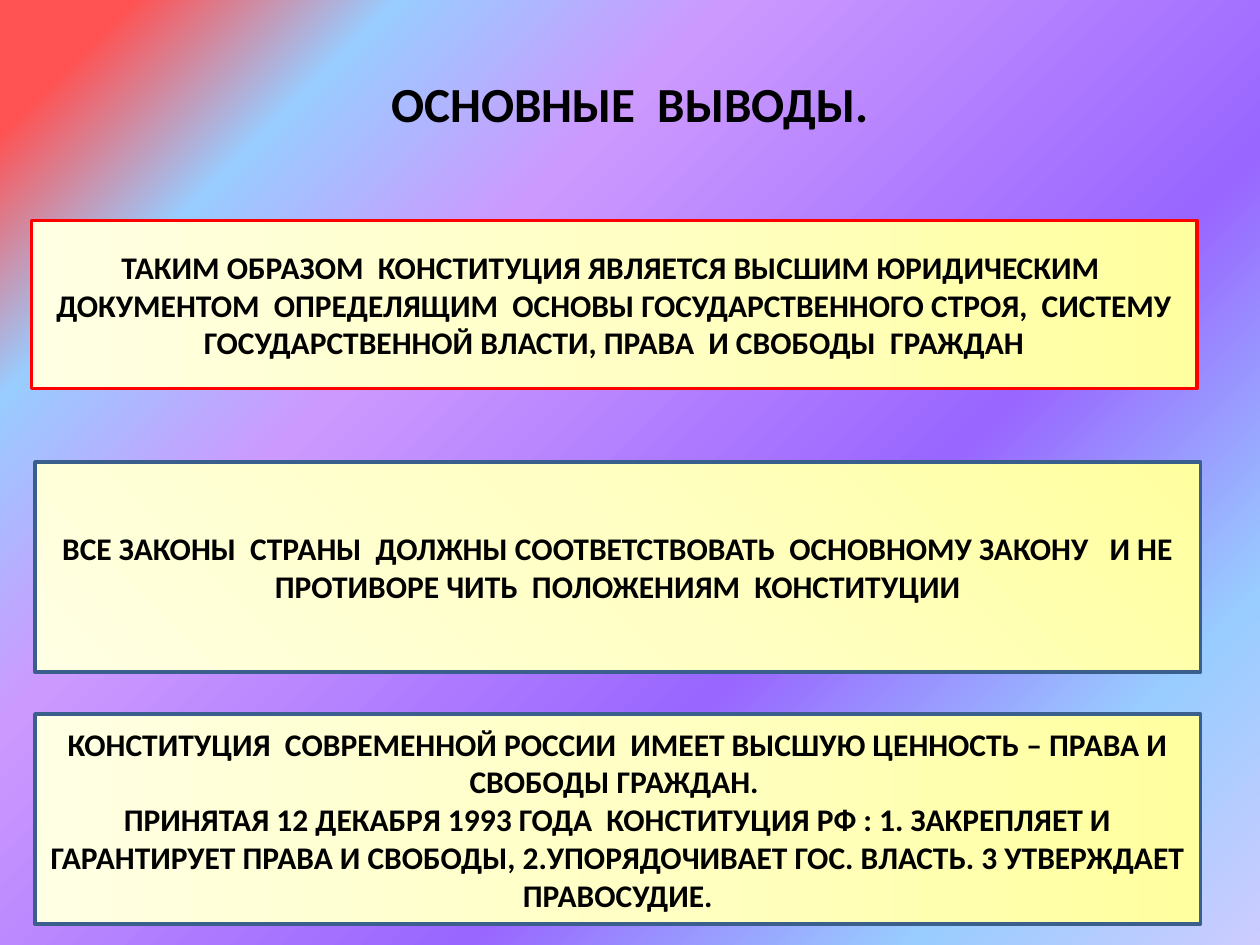
from lxml.etree import SubElement
from pptx import Presentation
from pptx.dml.color import RGBColor
from pptx.enum.shapes import MSO_SHAPE as Shape
from pptx.enum.text import MSO_ANCHOR as Anchor, PP_ALIGN as Align
from pptx.oxml.ns import qn
from pptx.util import Pt

COLORS = {"text": "000000", "red": "FF0000", "blue": "3A5F8C"}
FONT = "Calibri"
SKY_STOPS = [(0, "CCCCFF"), (16, "99CCFF"), (36, "9966FF"),
             (67, "CC99FF"), (82, "99CCFF"), (94, "FF5252")]
CREAM_STOPS = [(0, "FFFFA0"), (50, "FFFFC5"), (100, "FFFFE3")]
BOTTOM_RIGHT = {"l": 100, "t": 100, "r": 0, "b": 0}
TOP_RIGHT = {"l": 100, "t": 0, "r": 0, "b": 100}
BOX_WIDTH = 666

CONCLUSIONS = [
    (18, 126, 96, "red", None, [
        "ТАКИМ ОБРАЗОМ  КОНСТИТУЦИЯ ЯВЛЯЕТСЯ ВЫСШИМ ЮРИДИЧЕСКИМ  ДОКУМЕНТОМ  "
        "ОПРЕДЕЛЯЩИМ  ОСНОВЫ ГОСУДАРСТВЕННОГО СТРОЯ,  СИСТЕМУ "
        "ГОСУДАРСТВЕННОЙ ВЛАСТИ, ПРАВА  И СВОБОДЫ  ГРАЖДАН"]),
    (20, 264, 120, "blue", TOP_RIGHT, [
        "ВСЕ ЗАКОНЫ  СТРАНЫ  ДОЛЖНЫ СООТВЕТСТВОВАТЬ  ОСНОВНОМУ ЗАКОНУ   И НЕ "
        "ПРОТИВОРЕ ЧИТЬ  ПОЛОЖЕНИЯМ  КОНСТИТУЦИИ"]),
    (20, 408, 120, "blue", None, [
        "КОНСТИТУЦИЯ  СОВРЕМЕННОЙ РОССИИ  ИМЕЕТ ВЫСШУЮ ЦЕННОСТЬ – ПРАВА И "
        "СВОБОДЫ ГРАЖДАН. ",
        "ПРИНЯТАЯ 12 ДЕКАБРЯ 1993 ГОДА  КОНСТИТУЦИЯ РФ : 1. ЗАКРЕПЛЯЕТ И "
        "ГАРАНТИРУЕТ ПРАВА И СВОБОДЫ, 2.УПОРЯДОЧИВАЕТ ГОС. ВЛАСТЬ. "
        "3 УТВЕРЖДАЕТ ПРАВОСУДИЕ."]),
]


def fill_gradient(fill, owner, stops, focus=None):
    fill.gradient()
    gradient = next(owner.iter(qn("a:gradFill")))
    gradient.clear()
    stop_list = SubElement(gradient, qn("a:gsLst"))
    for percent, color in stops:
        stop = SubElement(stop_list, qn("a:gs"), pos=str(percent * 1000))
        SubElement(stop, qn("a:srgbClr"), val=color)
    if focus:
        shade = SubElement(gradient, qn("a:path"), {"path": "circle"})
        edges = {side: str(percent * 1000) for side, percent in focus.items()}
        SubElement(shade, qn("a:fillToRect"), edges)
    else:
        SubElement(gradient, qn("a:lin"), ang=str(180 * 60000), scaled="0")


def write_text(frame, lines, size):
    frame.text = "\n".join(lines)
    frame.word_wrap = True
    frame.vertical_anchor = Anchor.MIDDLE
    for para in frame.paragraphs:
        para.alignment = Align.CENTER
        for span in para.runs:
            span.font.name = FONT
            span.font.size = Pt(size)
            span.font.bold = True
            span.font.color.rgb = RGBColor.from_string(COLORS["text"])


def add_title(page, text):
    title = page.shapes.title
    title.left, title.top = Pt(36), Pt(21.6)
    title.width, title.height = Pt(648), Pt(74.4)
    write_text(title.text_frame, [text], 28)


def add_conclusion(page, left, top, height, outline, focus, lines):
    box = page.shapes.add_shape(
        Shape.RECTANGLE, Pt(left), Pt(top), Pt(BOX_WIDTH), Pt(height))
    box.shadow.inherit = False
    fill_gradient(box.fill, box.element, CREAM_STOPS, focus)
    box.line.color.rgb = RGBColor.from_string(COLORS[outline])
    box.line.width = Pt(2)
    write_text(box.text_frame, lines, 18)


def main():
    deck = Presentation()
    deck.slide_width, deck.slide_height = Pt(720), Pt(540)
    page = deck.slides.add_slide(deck.slide_layouts[5])
    fill_gradient(page.background.fill, page.element, SKY_STOPS, BOTTOM_RIGHT)
    add_title(page, "ОСНОВНЫЕ  ВЫВОДЫ.")
    for conclusion in CONCLUSIONS:
        add_conclusion(page, *conclusion)
    deck.save("out.pptx")


if __name__ == "__main__":
    main()
